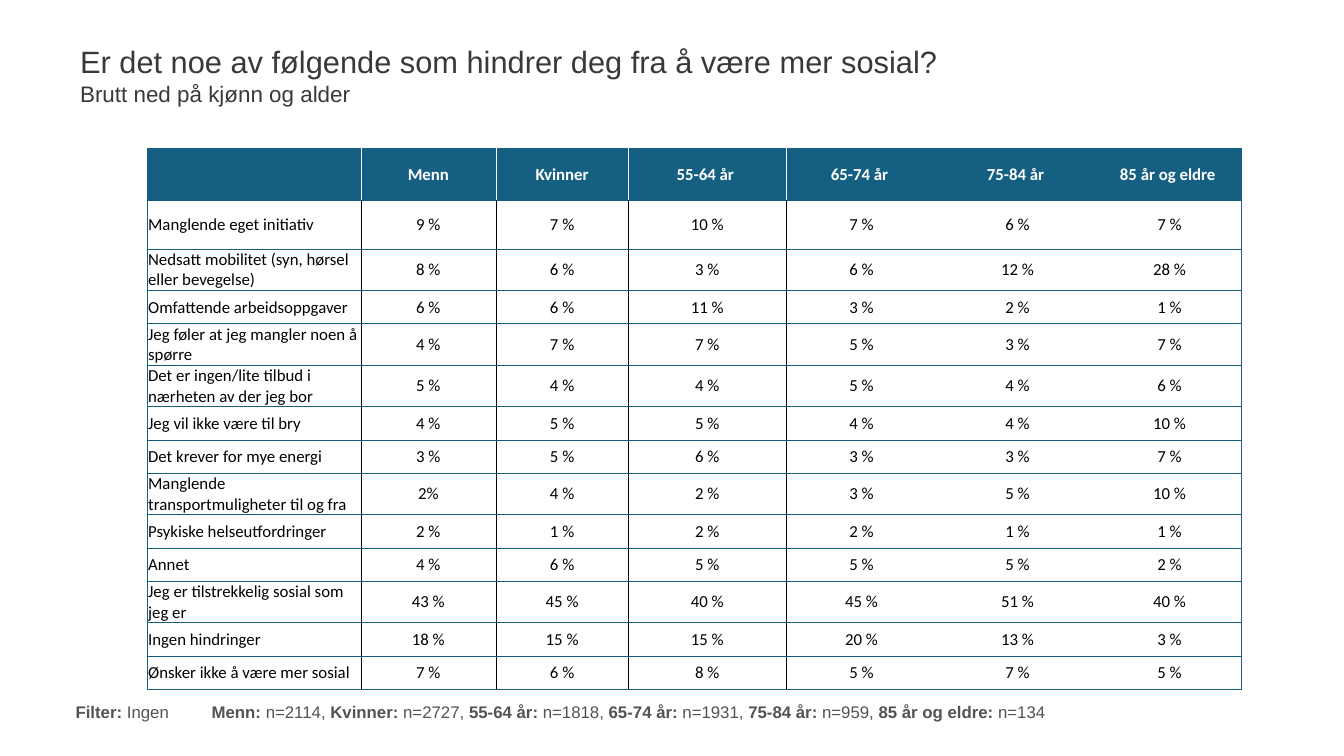
import lxml.etree
import pptx
import pptx.dml.color
import pptx.enum.text
import pptx.oxml.ns
import pptx.util
from pptx.util import Inches

COLORS = {
    "title": "3B3838",
    "blue": "156082",
    "white": "FFFFFF",
    "black": "000000",
    "note": "535353",
}
NO_STYLE = "{2D5ABB26-0587-4C30-8999-92F81FD0307C}"
MIDDLE = pptx.enum.text.MSO_ANCHOR.MIDDLE
LEFT = pptx.enum.text.PP_ALIGN.LEFT
CENTER = pptx.enum.text.PP_ALIGN.CENTER

COLUMN_WIDTHS = [4.23, 2.68, 2.63, 3.13, 2.99, 3.2, 2.84]
ROW_HEIGHTS = [1.02, 0.97] + [0.66] * 12
DIVIDERS = (1, 3)
ROWS = [
    ["", "Menn", "Kvinner", "55-64 år ", "65-74 år ", "75-84 år ", "85 år og eldre "],
    ["Manglende eget initiativ", "9 %", "7 %", "10 %", "7 %", "6 %", "7 %"],
    ["Nedsatt mobilitet (syn, hørsel eller bevegelse)", "8 %", "6 %", "3 %", "6 %", "12 %", "28 %"],
    ["Omfattende arbeidsoppgaver", "6 %", "6 %", "11 %", "3 %", "2 %", "1 %"],
    ["Jeg føler at jeg mangler noen å spørre", "4 %", "7 %", "7 %", "5 %", "3 %", "7 %"],
    ["Det er ingen/lite tilbud i nærheten av der jeg bor", "5 %", "4 %", "4 %", "5 %", "4 %", "6 %"],
    ["Jeg vil ikke være til bry", "4 %", "5 %", "5 %", "4 %", "4 %", "10 %"],
    ["Det krever for mye energi", "3 %", "5 %", "6 %", "3 %", "3 %", "7 %"],
    ["Manglende transportmuligheter til og fra", "2%", "4 %", "2 %", "3 %", "5 %", "10 %"],
    ["Psykiske helseutfordringer", "2 %", "1 %", "2 %", "2 %", "1 %", "1 %"],
    ["Annet", "4 %", "6 %", "5 %", "5 %", "5 %", "2 %"],
    ["Jeg er tilstrekkelig sosial som jeg er", "43 %", "45 %", "40 %", "45 %", "51 %", "40 %"],
    ["Ingen hindringer", "18 %", "15 %", "15 %", "20 %", "13 %", "3 %"],
    ["Ønsker ikke å være mer sosial", "7 %", "6 %", "8 %", "5 %", "7 %", "5 %"],
]
NOTE = [
    ("Filter: ", "Ingen \t"),
    ("Menn: ", "n=2114, "),
    ("Kvinner:", " n=2727, "),
    ("55-64 år:", " n=1818, "),
    ("65-74 år:", " n=1931, "),
    ("75-84 år:", " n=959, "),
    ("85 år og eldre:", " n=134"),
]


class SlideBuilder:
    def __init__(self, slide):
        self.slide = slide

    def color(self, name):
        return pptx.dml.color.RGBColor.from_string(COLORS[name])

    def add_span(self, para, text, size, font, color, bold=False):
        span = para.add_run()
        span.text = text
        span.font.size = pptx.util.Pt(size)
        span.font.name = font
        span.font.bold = bold
        span.font.color.rgb = self.color(color)

    def prepare_frame(self, frame):
        frame.word_wrap = True
        frame.auto_size = pptx.enum.text.MSO_AUTO_SIZE.NONE
        frame.vertical_anchor = MIDDLE
        frame.margin_left = frame.margin_right = Inches(0.06)
        frame.margin_top = frame.margin_bottom = Inches(0.06)
        frame.paragraphs[0].alignment = LEFT
        return frame.paragraphs[0]

    def add_title(self, left, top, width, height, heading, subheading):
        title = self.slide.shapes.title
        title.left, title.top = Inches(left), Inches(top)
        title.width, title.height = Inches(width), Inches(height)
        para = self.prepare_frame(title.text_frame)
        self.add_span(para, heading, 44, "Arial", "title")
        para.add_line_break()
        self.add_span(para, subheading, 32, "Arial", "title")

    def add_note(self, left, top, width, height, pairs, tab):
        box = self.slide.shapes.add_textbox(
            Inches(left), Inches(top), Inches(width), Inches(height))
        para = self.prepare_frame(box.text_frame)
        properties = para._p.get_or_add_pPr()
        tabs = lxml.etree.SubElement(properties, pptx.oxml.ns.qn("a:tabLst"))
        lxml.etree.SubElement(tabs, pptx.oxml.ns.qn("a:tab"), pos=str(Inches(tab)), algn="l")
        for label, value in pairs:
            self.add_span(para, label, 24, "Arial", "note", True)
            self.add_span(para, value, 24, "Arial", "note")

    def add_border(self, cell, side, color):
        properties = cell._tc.get_or_add_tcPr()
        line = lxml.etree.SubElement(
            properties, pptx.oxml.ns.qn("a:ln" + side), w=str(pptx.util.Pt(1)))
        fill = lxml.etree.SubElement(line, pptx.oxml.ns.qn("a:solidFill"))
        lxml.etree.SubElement(fill, pptx.oxml.ns.qn("a:srgbClr"), val=COLORS[color])

    def format_cell(self, cell, text, row, column):
        header = row == 0
        divider = "white" if header else "black"
        if column == 0:
            self.add_border(cell, "L", "blue")
        elif column in DIVIDERS:
            self.add_border(cell, "L", divider)
        if column == len(COLUMN_WIDTHS) - 1:
            self.add_border(cell, "R", "blue")
        elif column + 1 in DIVIDERS:
            self.add_border(cell, "R", divider)
        self.add_border(cell, "T", "blue")
        self.add_border(cell, "B", "blue")
        if header or column == 0:
            cell.fill.solid()
            cell.fill.fore_color.rgb = self.color("blue" if header else "white")
        else:
            cell.fill.background()
        cell.vertical_anchor = MIDDLE
        cell.margin_left = cell.margin_right = cell.margin_top = Inches(0.01)
        cell.margin_bottom = 0
        para = cell.text_frame.paragraphs[0]
        para.alignment = CENTER if column else LEFT
        if text:
            self.add_span(para, text, 24, "Calibri", "white" if header else "black", header)

    def add_table(self, left, top, rows):
        table = self.slide.shapes.add_table(
            len(rows), len(COLUMN_WIDTHS), Inches(left), Inches(top),
            Inches(sum(COLUMN_WIDTHS)), Inches(sum(ROW_HEIGHTS))).table
        table.horz_banding = False
        table._tbl.tblPr.find(pptx.oxml.ns.qn("a:tableStyleId")).text = NO_STYLE
        for column, width in zip(table.columns, COLUMN_WIDTHS):
            column.width = Inches(width)
        for row, height in zip(table.rows, ROW_HEIGHTS):
            row.height = Inches(height)
        for row, texts in enumerate(rows):
            for column, text in enumerate(texts):
                self.format_cell(table.cell(row, column), text, row, column)


def main():
    deck = pptx.Presentation()
    deck.slide_width, deck.slide_height = Inches(26.67), Inches(15)
    page = SlideBuilder(deck.slides.add_slide(deck.slide_layouts[5]))
    page.add_title(1.53, 0.47, 23.66, 2.04,
                   "Er det noe av følgende som hindrer deg fra å være mer sosial? ",
                   "Brutt ned på kjønn og alder")
    page.add_table(2.93, 2.95, ROWS)
    page.add_note(1.44, 13.65, 23.66, 0.93, NOTE, 2.7)
    deck.save("out.pptx")


if __name__ == "__main__":
    main()
